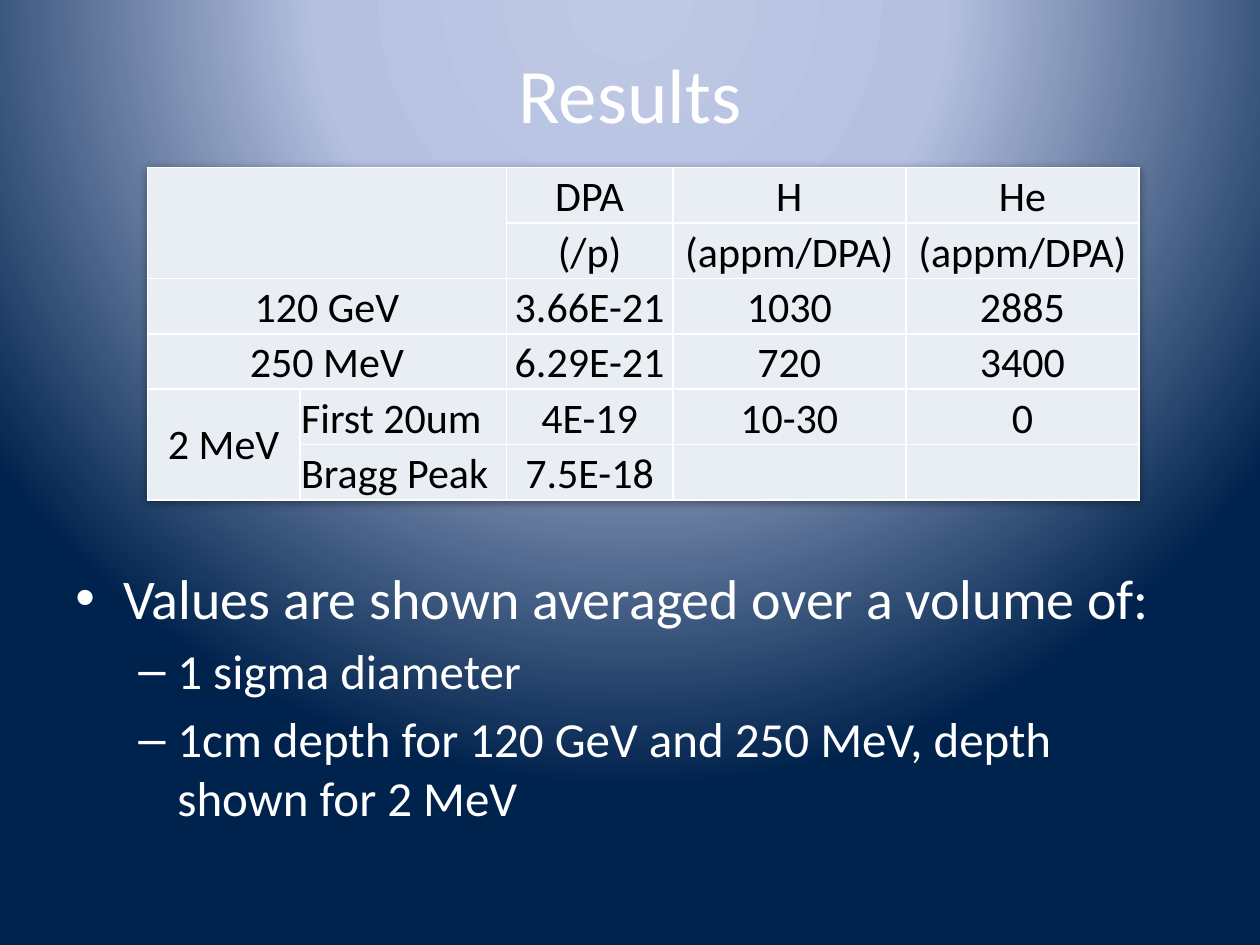
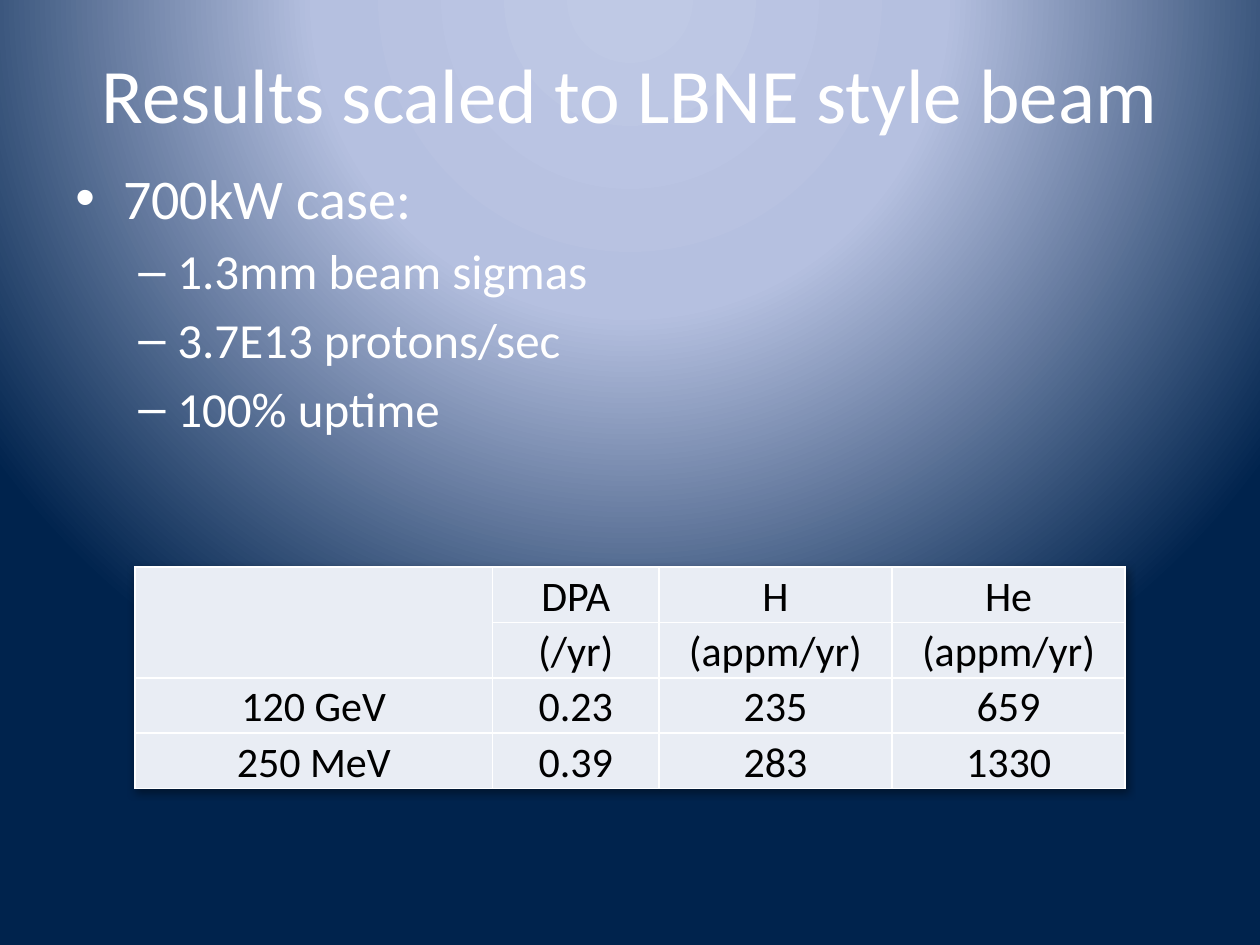
from dataclasses import dataclass

from pptx import Presentation
from pptx import util as u
from pptx.dml.color import RGBColor
from pptx.enum import text as t
from pptx.oxml import parse_xml
from pptx.oxml.ns import nsdecls
from pptx.slide import Slide
from pptx.table import _Cell
from pptx.text.text import TextFrame

PX = 9144
FONT = "Calibri"
WHITE = RGBColor(0xFF, 0xFF, 0xFF)
BLACK = RGBColor(0x00, 0x00, 0x00)
PALE = RGBColor(0xE9, 0xED, 0xF4)
STOPS = (
    (0, RGBColor(0xBF, 0xC9, 0xE5)),
    (40, RGBColor(0xB5, 0xC0, 0xE0)),
    (100, RGBColor(0x00, 0x23, 0x4D)),
)
MID = t.PP_ALIGN.CENTER
LEFT = t.PP_ALIGN.LEFT


@dataclass(frozen=True)
class Box:
    left: int
    top: int
    width: int
    height: int


@dataclass(frozen=True)
class Mark:
    sign: str
    size: int
    left: int
    hang: int


@dataclass(frozen=True)
class Grid:
    left: int
    top: int
    cols: tuple[int, ...]
    rows: tuple[tuple[str, ...], ...]
    spans: tuple[tuple[int, int, int, int], ...]
    names: int | None = None


@dataclass(frozen=True)
class Page:
    title: str
    grid: Grid
    body: Box
    head: str
    items: tuple[str, ...]


HEAD = Box(50, 30, 900, 87)
MAIN = Mark("•", 32, 38, 38)
SUB = Mark("–", 28, 81, 31)
ROW = 44

PAGES = (
    Page(
        "Results",
        Grid(
            117, 133, (121, 164, 132, 185, 185),
            (
                ("", "", "DPA", "H", "He"),
                ("", "", "(/p)", "(appm/DPA)", "(appm/DPA)"),
                ("120 GeV", "", "3.66E-21", "1030", "2885"),
                ("250 MeV", "", "6.29E-21", "720", "3400"),
                ("2 MeV", "First 20um", "4E-19", "10-30", "0"),
                ("", "Bragg Peak", "7.5E-18", "", ""),
            ),
            ((0, 0, 1, 1), (2, 0, 2, 1), (3, 0, 3, 1), (4, 0, 5, 0)),
            names=1,
        ),
        Box(50, 442, 900, 267),
        "Values are shown averaged over a volume of:",
        (
            "1 sigma diameter",
            "1cm depth for 120 GeV and 250 MeV, depth shown for 2 MeV",
        ),
    ),
    Page(
        "Results scaled to LBNE style beam",
        Grid(
            107, 450, (284, 132, 185, 185),
            (
                ("", "DPA", "H", "He"),
                ("", "(/yr)", "(appm/yr)", "(appm/yr)"),
                ("120 GeV", "0.23", "235", "659"),
                ("250 MeV", "0.39", "283", "1330"),
            ),
            ((0, 0, 1, 0),),
        ),
        Box(50, 125, 900, 583),
        "700kW case:",
        ("1.3mm beam sigmas", "3.7E13 protons/sec", "100% uptime"),
    ),
)


def write(frame: TextFrame, words: str, *, size: int, color: RGBColor = WHITE,
          align: t.PP_ALIGN = LEFT, mark: Mark | None = None,
          more: bool = False) -> None:
    para = frame.add_paragraph() if more else frame.paragraphs[0]
    para.alignment = align
    para.font.size = u.Pt(size)
    if mark:
        props = para._p.get_or_add_pPr()
        props.set("marL", str(mark.left * PX))
        props.set("indent", str(-mark.hang * PX))
        props.insert(0, parse_xml(
            f'<a:spcBef {nsdecls("a")}><a:spcPct val="20000"/></a:spcBef>'))
        props.insert(1, parse_xml(
            f'<a:buFont {nsdecls("a")} typeface="Arial"/>'))
        props.insert(2, parse_xml(
            f'<a:buChar {nsdecls("a")} char="{mark.sign}"/>'))
    if words:
        run = para.add_run()
        run.text = words
        run.font.size = u.Pt(size)
        run.font.name = FONT
        run.font.color.rgb = color


def frame(slide: Slide, box: Box, anchor: t.MSO_ANCHOR) -> TextFrame:
    area = slide.shapes.add_textbox(
        box.left * PX, box.top * PX, box.width * PX, box.height * PX).text_frame
    area.word_wrap = True
    area.vertical_anchor = anchor
    return area


def paint(slide: Slide) -> None:
    stops = "".join(
        f'<a:gs pos="{pos * 1000}"><a:srgbClr val="{color}"/></a:gs>'
        for pos, color in STOPS)
    slide.element.cSld.insert(0, parse_xml(
        f'<p:bg {nsdecls("p", "a")}><p:bgPr><a:gradFill rotWithShape="1">'
        f'<a:gsLst>{stops}</a:gsLst><a:path path="circle">'
        '<a:fillToRect l="50000" t="-80000" r="50000" b="180000"/></a:path>'
        '</a:gradFill><a:effectLst/></p:bgPr></p:bg>'))


def style(cell: _Cell, anchor: t.MSO_ANCHOR) -> None:
    cell.margin_left = cell.margin_right = cell.margin_top = PX
    cell.margin_bottom = 0
    cell.vertical_anchor = anchor
    cell.fill.solid()
    cell.fill.fore_color.rgb = PALE
    props = cell._tc.get_or_add_tcPr()
    for spot, side in enumerate("LRTB"):
        props.insert(spot, parse_xml(
            f'<a:ln{side} {nsdecls("a")} w="{u.Pt(1)}"><a:solidFill>'
            f'<a:srgbClr val="{WHITE}"/></a:solidFill></a:ln{side}>'))


def tabulate(slide: Slide, grid: Grid) -> None:
    table = slide.shapes.add_table(
        len(grid.rows), len(grid.cols), grid.left * PX, grid.top * PX,
        sum(grid.cols) * PX, len(grid.rows) * ROW * PX).table
    table.first_row = table.horz_banding = False
    table._tbl.tblPr.insert(0, parse_xml(
        f'<a:effectLst {nsdecls("a")}><a:outerShdw blurRad="{u.Pt(5)}" '
        f'dist="{u.Pt(1)}" dir="5400000"><a:srgbClr val="{BLACK}">'
        '<a:alpha val="40000"/></a:srgbClr></a:outerShdw></a:effectLst>'))
    for col, width in zip(table.columns, grid.cols):
        col.width = width * PX
    tall = {(top, left) for top, left, low, _ in grid.spans if low > top}
    for y, row in enumerate(grid.rows):
        table.rows[y].height = ROW * PX
        for x, words in enumerate(row):
            cell = table.cell(y, x)
            style(cell, t.MSO_ANCHOR.MIDDLE if (y, x) in tall
                  else t.MSO_ANCHOR.BOTTOM)
            write(cell.text_frame, words, size=24, color=BLACK,
                  align=LEFT if x == grid.names else MID)
    for top, left, low, right in grid.spans:
        table.cell(top, left).merge(table.cell(low, right))


def draw(slide: Slide, page: Page) -> None:
    paint(slide)
    write(frame(slide, HEAD, t.MSO_ANCHOR.MIDDLE), page.title,
          size=44, align=MID)
    tabulate(slide, page.grid)
    body = frame(slide, page.body, t.MSO_ANCHOR.TOP)
    write(body, page.head, size=MAIN.size, mark=MAIN)
    for item in page.items:
        write(body, item, size=SUB.size, mark=SUB, more=True)


def main() -> None:
    deck = Presentation()
    deck.slide_width, deck.slide_height = 1000 * PX, 750 * PX
    for page in PAGES:
        draw(deck.slides.add_slide(deck.slide_layouts[6]), page)
    deck.save("out.pptx")


if __name__ == "__main__":
    main()
